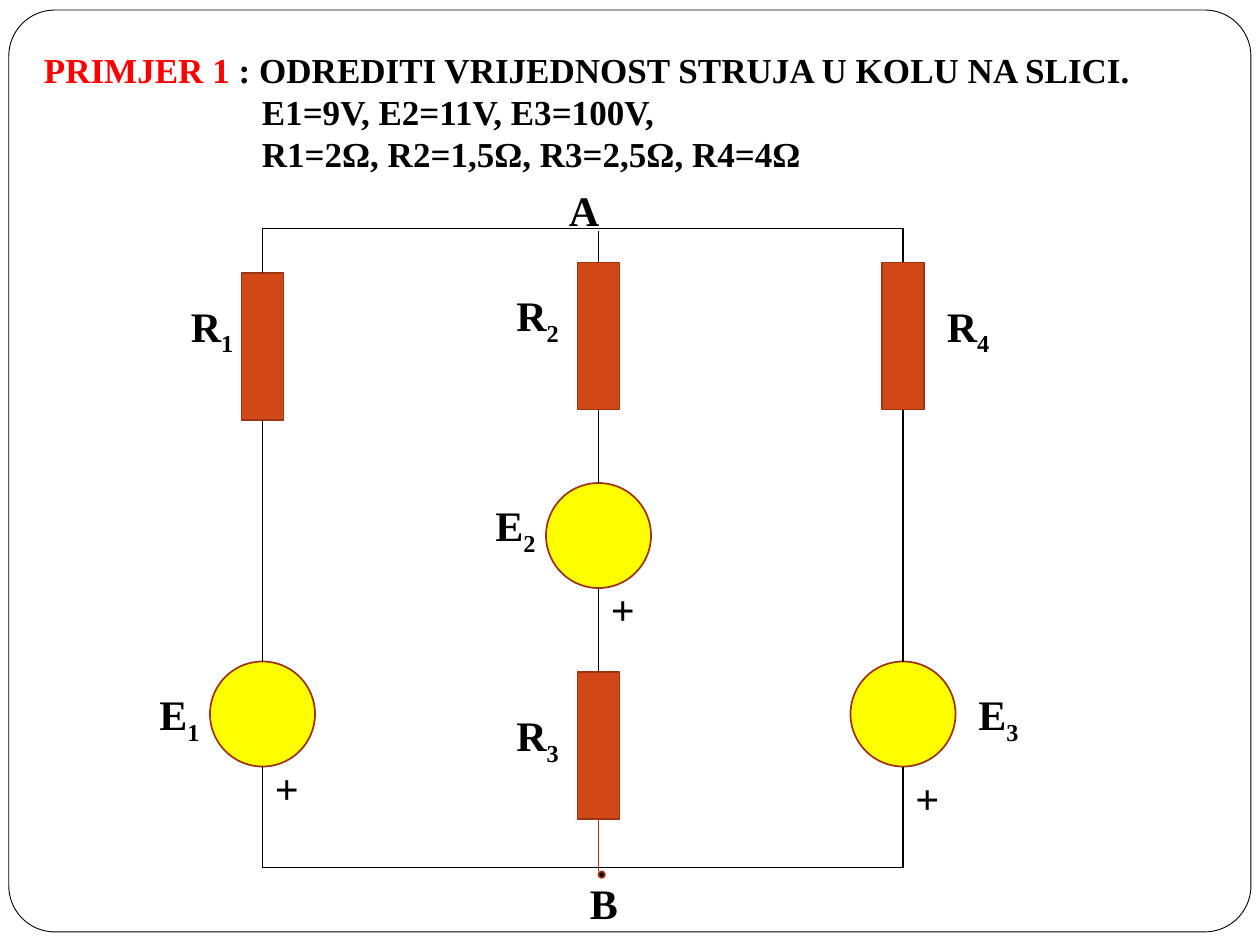
from typing import NamedTuple

from pptx import Presentation
from pptx.dml.color import RGBColor
from pptx.enum.shapes import MSO_CONNECTOR as Wire, MSO_SHAPE as Preset
from pptx.enum.text import MSO_AUTO_SIZE as AutoSize
from pptx.oxml.ns import qn
from pptx.util import Inches, Pt
from lxml.etree import SubElement

BLACK = RGBColor(0x00, 0x00, 0x00)
WHITE = RGBColor(0xFF, 0xFF, 0xFF)
RED = RGBColor(0xFF, 0x00, 0x00)
YELLOW = RGBColor(0xFF, 0xFF, 0x00)
ORANGE = RGBColor(0xD3, 0x48, 0x17)
RUST = RGBColor(0x9C, 0x35, 0x11)
LEAD = RGBColor(0xB1, 0x36, 0x0B)
FONT = "Times New Roman"
CELL = Inches(10) / 120
LEFT, MIDDLE, RIGHT = 25, 57, 86


class Part(NamedTuple):
    column: float
    row: float


class Label(NamedTuple):
    letter: str
    digit: str
    column: float
    row: float
    width: float
    wrap: bool = True


class Lead(NamedTuple):
    column: float
    top: float
    bottom: float
    color: RGBColor = BLACK


class Elbow(NamedTuple):
    row: float
    step: float
    depth: float
    upward: bool


RESISTORS = [Part(MIDDLE, 25), Part(MIDDLE, 64), Part(LEFT, 26), Part(RIGHT, 25)]
SOURCES = [Part(LEFT, 63), Part(MIDDLE, 46), Part(RIGHT, 63)]
ELBOWS = [Elbow(26, 1, 4.2, True), Elbow(73, 0.02, 10.2, False)]
LEADS = [
    Lead(LEFT, 40, 63),
    Lead(RIGHT, 39, 63),
    Lead(MIDDLE, 22, 25),
    Lead(MIDDLE, 39, 46),
    Lead(MIDDLE, 56, 64),
    Lead(MIDDLE, 78, 83, LEAD),
]
LABELS = [
    Label("+", "", MIDDLE, 55, 6.8),
    Label("+", "", LEFT, 72, 5.8),
    Label("+", "", RIGHT, 73, 5.8),
    Label("E", "1", 14, 65, 6.2, False),
    Label("E", "2", 46, 47, 8.2),
    Label("E", "3", 92, 65, 6.2, False),
    Label("R", "1", 17, 28, 6.5, False),
    Label("R", "2", 48, 27, 8.5),
    Label("R", "3", 48, 67, 9.5),
    Label("R", "4", 89, 28, 8.5),
    Label("A", "", 53, 17, 8),
    Label("B", "", 55, 83, 4.9, False),
]


def grid(cells: float) -> int:
    return round(cells * CELL)


def draw_shape(page, preset, column: float, row: float, width: float, height: float,
               fill: RGBColor, line: RGBColor, weight: float = 1):
    shape = page.shapes.add_shape(preset, grid(column), grid(row), grid(width), grid(height))
    shape.shadow.inherit = False
    shape.fill.solid()
    shape.fill.fore_color.rgb = fill
    shape.line.color.rgb = line
    shape.line.width = Pt(weight)
    return shape


def draw_wire(page, kind, begin: Part, end: Part, color: RGBColor):
    wire = page.shapes.add_connector(
        kind, grid(begin.column), grid(begin.row), grid(end.column), grid(end.row))
    wire.line.color.rgb = color
    wire.line.width = Pt(0.75)
    SubElement(wire._element.spPr, qn("a:effectLst"))
    return wire


def draw_elbow(page, elbow: Elbow) -> None:
    direction = -1 if elbow.upward else 1
    center = Part((LEFT + RIGHT) / 2, elbow.row + direction * elbow.step / 2)
    half_span = (RIGHT - LEFT) / 2
    begin = Part(center.column + elbow.step / 2, center.row - direction * half_span)
    end = Part(center.column - elbow.step / 2, center.row + direction * half_span)
    wire = draw_wire(page, Wire.ELBOW, begin, end, BLACK)
    properties = wire._element.spPr
    properties.find(qn("a:xfrm")).set("rot", str((90 if elbow.upward else 270) * 60000))
    adjustments = properties.find(qn("a:prstGeom")).find(qn("a:avLst"))
    bend = round(elbow.depth / elbow.step * 100000)
    SubElement(adjustments, qn("a:gd"), name="adj1", fmla=f"val {bend}")


def add_text_frame(page, column: float, row: float, width: float, height: float, wrap: bool):
    box = page.shapes.add_textbox(grid(column), grid(row), grid(width), grid(height))
    frame = box.text_frame
    frame.word_wrap = wrap
    frame.auto_size = AutoSize.SHAPE_TO_FIT_TEXT
    return frame


def style_paragraph(para, size: float) -> None:
    para.font.name = FONT
    para.font.size = Pt(size)
    para.font.bold = True
    para.font.color.rgb = BLACK


def draw_label(page, label: Label) -> None:
    frame = add_text_frame(page, label.column, label.row, label.width, 6, label.wrap)
    para = frame.paragraphs[0]
    style_paragraph(para, 24)
    para.add_run().text = label.letter
    if label.digit:
        span = para.add_run()
        span.text = label.digit
        span._r.get_or_add_rPr().set("baseline", "-25000")


def draw_task(page) -> None:
    frame = add_text_frame(page, 3, 4, 117, 13.3, True)
    heading = frame.paragraphs[0]
    style_paragraph(heading, 20)
    example = heading.add_run()
    example.text = "PRIMJER 1 "
    example.font.color.rgb = RED
    heading.add_run().text = ": ODREDITI VRIJEDNOST STRUJA U KOLU NA SLICI."
    for values in ("E1=9V, E2=11V, E3=100V,", "R1=2Ω, R2=1,5Ω, R3=2,5Ω, R4=4Ω"):
        para = frame.add_paragraph()
        para.text = values
        style_paragraph(para, 20)
        para._p.get_or_add_pPr().set("marL", str(Inches(1.73)))


def main() -> None:
    deck = Presentation()
    deck.slide_width, deck.slide_height = Inches(10), Inches(7.5)
    page = deck.slides.add_slide(deck.slide_layouts[6])
    border = draw_shape(page, Preset.ROUNDED_RECTANGLE, 0.84, 0.96, 118.3, 87.8,
                        WHITE, BLACK, 0.5)
    border.adjustments[0] = 0.05
    draw_task(page)
    for part in RESISTORS:
        draw_shape(page, Preset.RECTANGLE, part.column - 2, part.row, 4, 14, ORANGE, RUST)
    for part in SOURCES:
        draw_shape(page, Preset.OVAL, part.column - 5, part.row, 10, 10, YELLOW, RUST)
    for elbow in ELBOWS:
        draw_elbow(page, elbow)
    for lead in LEADS:
        draw_wire(page, Wire.STRAIGHT, Part(lead.column, lead.top),
                  Part(lead.column, lead.bottom), lead.color)
    draw_shape(page, Preset.OVAL, MIDDLE, 83, 0.6, 0.6, BLACK, RUST)
    for label in LABELS:
        draw_label(page, label)
    deck.save("out.pptx")


if __name__ == "__main__":
    main()
